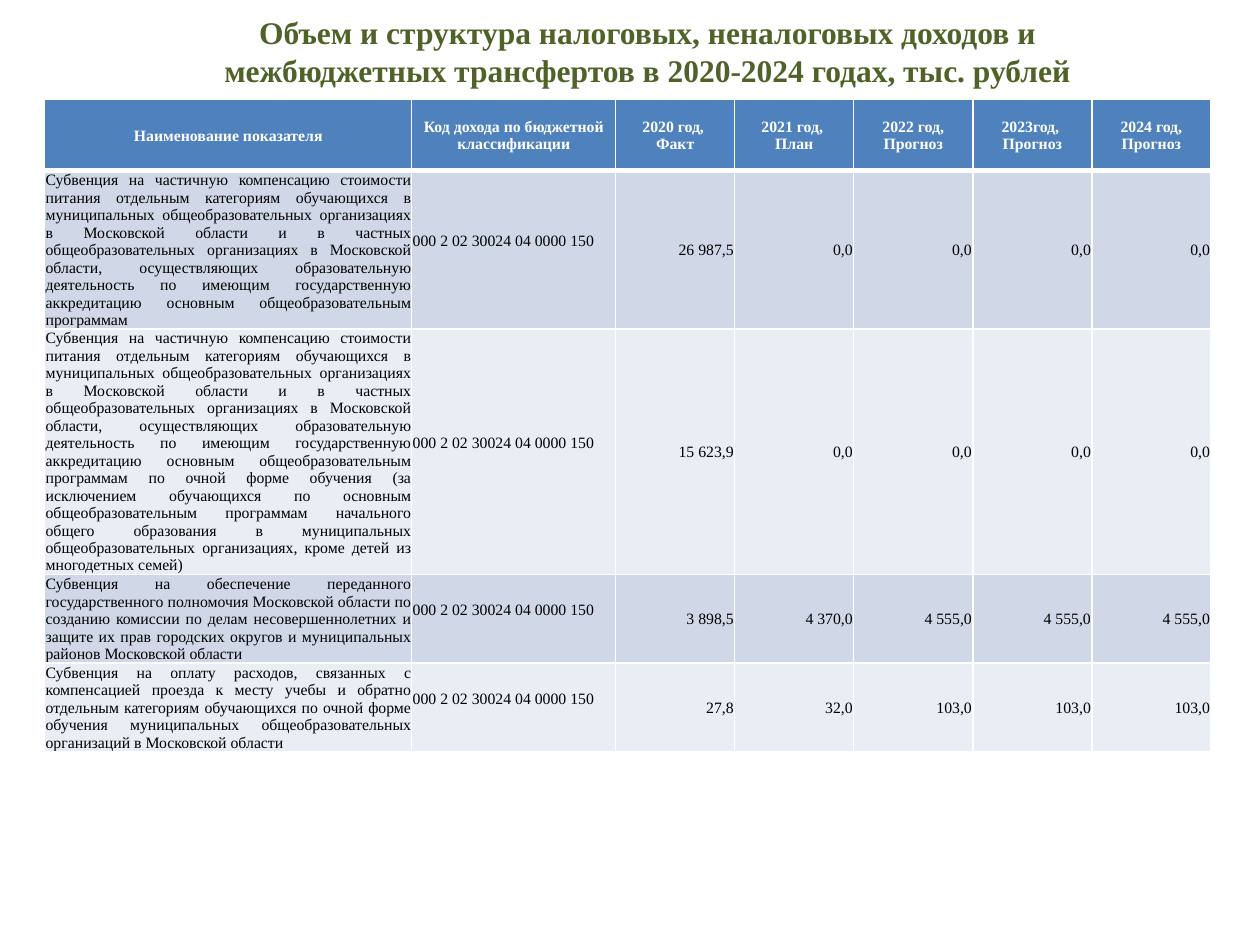
from pptx import Presentation
from pptx.dml.color import RGBColor
from pptx.enum.text import MSO_ANCHOR as Anchor, MSO_AUTO_SIZE as AutoSize, PP_ALIGN as Align
from pptx.oxml import parse_xml
from pptx.oxml.ns import nsdecls
from pptx.util import Cm, Pt

FONT = "Times New Roman"
GREEN, BLUE, WHITE, BLACK = "4F6228", "4F81BD", "FFFFFF", "000000"
BANDS = ("D0D8E8", "E9EDF4")
CODE = "000 2 02 30024 04 0000 150"
TITLE = [
    "Объем и структура налоговых, неналоговых доходов и",
    "межбюджетных трансфертов в 2020-2024 годах, тыс. рублей",
]
HEADERS = [
    ["Наименование показателя"],
    ["Код дохода по бюджетной классификации"],
    ["2020 год, ", "Факт"],
    ["2021 год, ", "План"],
    ["2022 год, Прогноз"],
    ["2023год, ", "Прогноз"],
    ["2024 год, Прогноз"],
]
MEALS = (
    "Субвенция на частичную компенсацию стоимости питания отдельным категориям "
    "обучающихся в муниципальных общеобразовательных организациях в Московской области "
    "и в частных общеобразовательных организациях в Московской области, осуществляющих "
    "образовательную деятельность по имеющим государственную аккредитацию основным "
    "общеобразовательным программам"
)
ROWS = [
    (MEALS, ["26 987,5", "0,0", "0,0", "0,0", "0,0"]),
    (MEALS + " по очной форме обучения (за исключением обучающихся по основным "
     "общеобразовательным программам начального общего образования в муниципальных "
     "общеобразовательных организациях, кроме детей из многодетных семей)",
     ["15 623,9", "0,0", "0,0", "0,0", "0,0"]),
    ("Субвенция на обеспечение переданного государственного полномочия Московской области "
     "по созданию комиссии по делам несовершеннолетних и защите их прав городских округов "
     "и муниципальных районов Московской области",
     ["3 898,5", "4 370,0", "4 555,0", "4 555,0", "4 555,0"]),
    ("Субвенция на оплату расходов, связанных с компенсацией проезда к месту учебы и обратно "
     "отдельным категориям обучающихся по очной форме обучения муниципальных "
     "общеобразовательных организаций в Московской области",
     ["27,8", "32,0", "103,0", "103,0", "103,0"]),
]
COLUMN_WIDTHS = [7.4, 4.11] + [2.4] * 5
ROW_HEIGHTS = [1.43, 3.18, 4.94, 1.79, 1.78]


def rgb(code):
    return RGBColor.from_string(code)


class SlideBuilder:
    def __init__(self, page, font):
        self.page = page
        self.font = font

    def set_lines(self, frame, lines, size, color, align, bold=False):
        frame.word_wrap = True
        for index, line in enumerate(lines):
            para = frame.paragraphs[0] if index == 0 else frame.add_paragraph()
            para.text = line
            para.alignment = align
            para.font.name = self.font
            para.font.size = Pt(size)
            para.font.bold = bold
            para.font.color.rgb = rgb(color)

    def title(self, lines, left, top, width, height):
        box = self.page.shapes.add_textbox(Cm(left), Cm(top), Cm(width), Cm(height))
        frame = box.text_frame
        frame.auto_size = AutoSize.NONE
        frame.vertical_anchor = Anchor.MIDDLE
        frame.margin_top = 0
        frame.margin_bottom = Cm(0.57)
        self.set_lines(frame, lines, 18, GREEN, Align.CENTER, bold=True)

    def table(self, left, top, widths, heights):
        shape = self.page.shapes.add_table(
            len(heights), len(widths), Cm(left), Cm(top), Cm(sum(widths)), Cm(sum(heights)))
        for column, width in zip(shape.table.columns, widths):
            column.width = Cm(width)
        for row, height in zip(shape.table.rows, heights):
            row.height = Cm(height)
        return shape.table

    def cell(self, cell, lines, fill, color, align, bold=False, bottom=0, above=1, below=1):
        cell.margin_left = cell.margin_right = cell.margin_top = Cm(0.02)
        cell.margin_bottom = Cm(bottom)
        cell.vertical_anchor = Anchor.MIDDLE
        self.set_lines(cell.text_frame, lines, 9, color, align, bold)
        properties = cell._tc.get_or_add_tcPr()
        for side, points in (("L", 1), ("R", 1), ("T", above), ("B", below)):
            properties.append(parse_xml(
                f'<a:ln{side} {nsdecls("a")} w="{Pt(points)}"><a:solidFill>'
                f'<a:srgbClr val="{WHITE}"/></a:solidFill></a:ln{side}>'))
        cell.fill.solid()
        cell.fill.fore_color.rgb = rgb(fill)


def main():
    deck = Presentation()
    deck.slide_width, deck.slide_height = Cm(25.4), Cm(19.05)
    builder = SlideBuilder(deck.slides.add_slide(deck.slide_layouts[6]), FONT)
    builder.title(TITLE, 0.71, 0.91, 24.69, 0.79)

    table = builder.table(0.9, 2.01, COLUMN_WIDTHS, ROW_HEIGHTS)
    for column, lines in enumerate(HEADERS):
        builder.cell(table.cell(0, column), lines, BLUE, WHITE, Align.CENTER, bold=True, below=3)
    for row, (name, values) in enumerate(ROWS, start=1):
        fill = BANDS[(row - 1) % 2]
        above = 3 if row == 1 else 1
        builder.cell(table.cell(row, 0), [name], fill, BLACK, Align.JUSTIFY, above=above)
        builder.cell(table.cell(row, 1), [CODE], fill, BLACK, Align.LEFT, bottom=0.36, above=above)
        for column, value in enumerate(values, start=2):
            builder.cell(table.cell(row, column), [value], fill, BLACK, Align.RIGHT, above=above)

    deck.save("out.pptx")


if __name__ == "__main__":
    main()
